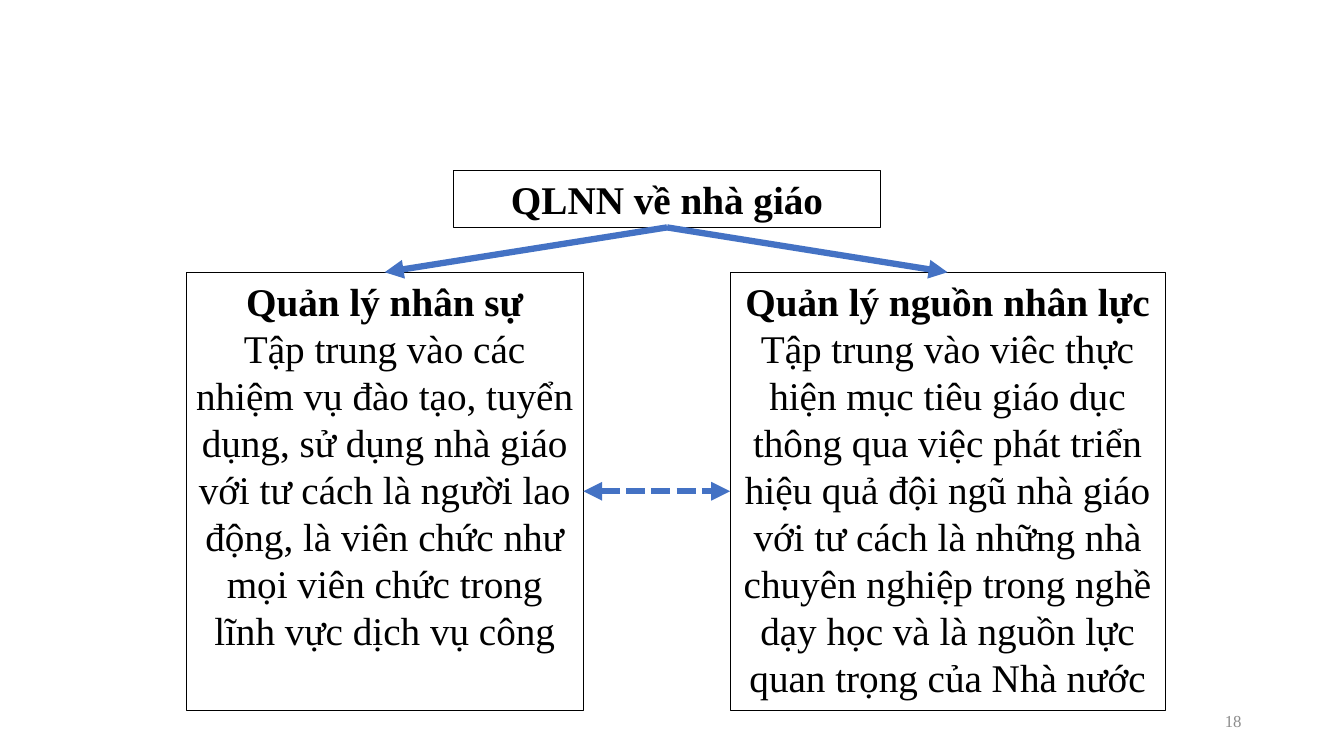
from dataclasses import dataclass

from lxml.etree import SubElement
from pptx import Presentation
from pptx.dml.color import RGBColor
from pptx.enum.dml import MSO_LINE
from pptx.enum.shapes import MSO_CONNECTOR, MSO_SHAPE
from pptx.enum.text import MSO_ANCHOR, PP_ALIGN
from pptx.oxml.ns import qn
from pptx.shapes.autoshape import Shape
from pptx.slide import Slide
from pptx.text.text import _Paragraph
from pptx.util import Cm, Pt

COLORS = {"ink": "000000", "arrow": "4472C4", "number": "8C8C8C"}
FONT = "Times New Roman"
TOP, LEFT, BOTTOM, RIGHT = range(4)


@dataclass
class Panel:
    key: str
    left: float
    top: float
    width: float
    height: float
    heading: str
    body: str = ""


@dataclass
class Arrow:
    source: str
    source_side: int
    target: str
    target_side: int
    mutual: bool = False


PANELS = [
    Panel("state", 11.43, 4.29, 10.76, 1.44, "QLNN về nhà giáo"),
    Panel("personnel", 4.69, 6.86, 10.01, 11.04, "Quản lý nhân sự",
          "Tập trung vào các nhiệm vụ đào tạo, tuyển dụng, sử dụng nhà giáo "
          "với tư cách là người lao động, là viên chức như mọi viên chức trong "
          "lĩnh vực dịch vụ công"),
    Panel("resources", 18.4, 6.86, 10.96, 11.04, "Quản lý nguồn nhân lực",
          "Tập trung vào viêc thực hiện mục tiêu giáo dục thông qua việc phát "
          "triển hiệu quả đội ngũ nhà giáo với tư cách là những nhà chuyên "
          "nghiệp trong nghề dạy học và là nguồn lực quan trọng của Nhà nước"),
]

ARROWS = [
    Arrow("state", BOTTOM, "personnel", TOP),
    Arrow("state", BOTTOM, "resources", TOP),
    Arrow("personnel", RIGHT, "resources", LEFT, mutual=True),
]


def color(name: str) -> RGBColor:
    return RGBColor.from_string(COLORS[name])


def style(paragraph: _Paragraph, size: float, ink: str,
          align: PP_ALIGN, bold: bool = False) -> None:
    paragraph.alignment = align
    for span in paragraph.runs:
        span.font.name = FONT
        span.font.size = Pt(size)
        span.font.bold = bold
        span.font.color.rgb = color(ink)


def draw_panel(page: Slide, panel: Panel) -> Shape:
    box = page.shapes.add_shape(
        MSO_SHAPE.RECTANGLE, Cm(panel.left), Cm(panel.top),
        Cm(panel.width), Cm(panel.height))
    box.shadow.inherit = False
    box.fill.background()
    box.line.color.rgb = color("ink")
    box.line.width = Pt(0.25)
    frame = box.text_frame
    frame.word_wrap = True
    frame.vertical_anchor = MSO_ANCHOR.TOP
    frame.text = panel.heading
    style(frame.paragraphs[0], 28, "ink", PP_ALIGN.CENTER, bold=True)
    if panel.body:
        paragraph = frame.add_paragraph()
        paragraph.text = panel.body
        style(paragraph, 28, "ink", PP_ALIGN.CENTER)
    return box


def draw_arrow(page: Slide, arrow: Arrow, boxes: dict[str, Shape]) -> None:
    connector = page.shapes.add_connector(MSO_CONNECTOR.STRAIGHT, 0, 0, 0, 0)
    connector.begin_connect(boxes[arrow.source], arrow.source_side)
    connector.end_connect(boxes[arrow.target], arrow.target_side)
    connector.line.color.rgb = color("arrow")
    connector.line.width = Pt(4.5)
    if arrow.mutual:
        connector.line.dash_style = MSO_LINE.SQUARE_DOT
    properties = connector._element.spPr
    outline = properties.find(qn("a:ln"))
    for end in ["headEnd", "tailEnd"] if arrow.mutual else ["tailEnd"]:
        SubElement(outline, qn(f"a:{end}"), type="triangle")
    SubElement(properties, qn("a:effectLst"))


def draw_page_number(page: Slide, number: str) -> None:
    box = page.shapes.add_textbox(Cm(23.92), Cm(17.65), Cm(7.62), Cm(1.02))
    frame = box.text_frame
    frame.word_wrap = True
    frame.vertical_anchor = MSO_ANCHOR.MIDDLE
    frame.text = number
    style(frame.paragraphs[0], 12, "number", PP_ALIGN.RIGHT)


def main() -> None:
    deck = Presentation()
    deck.slide_width, deck.slide_height = Cm(33.87), Cm(19.05)
    page = deck.slides.add_slide(deck.slide_layouts[6])
    boxes = {panel.key: draw_panel(page, panel) for panel in PANELS}
    for arrow in ARROWS:
        draw_arrow(page, arrow, boxes)
    draw_page_number(page, "18")
    deck.save("out.pptx")


if __name__ == "__main__":
    main()
